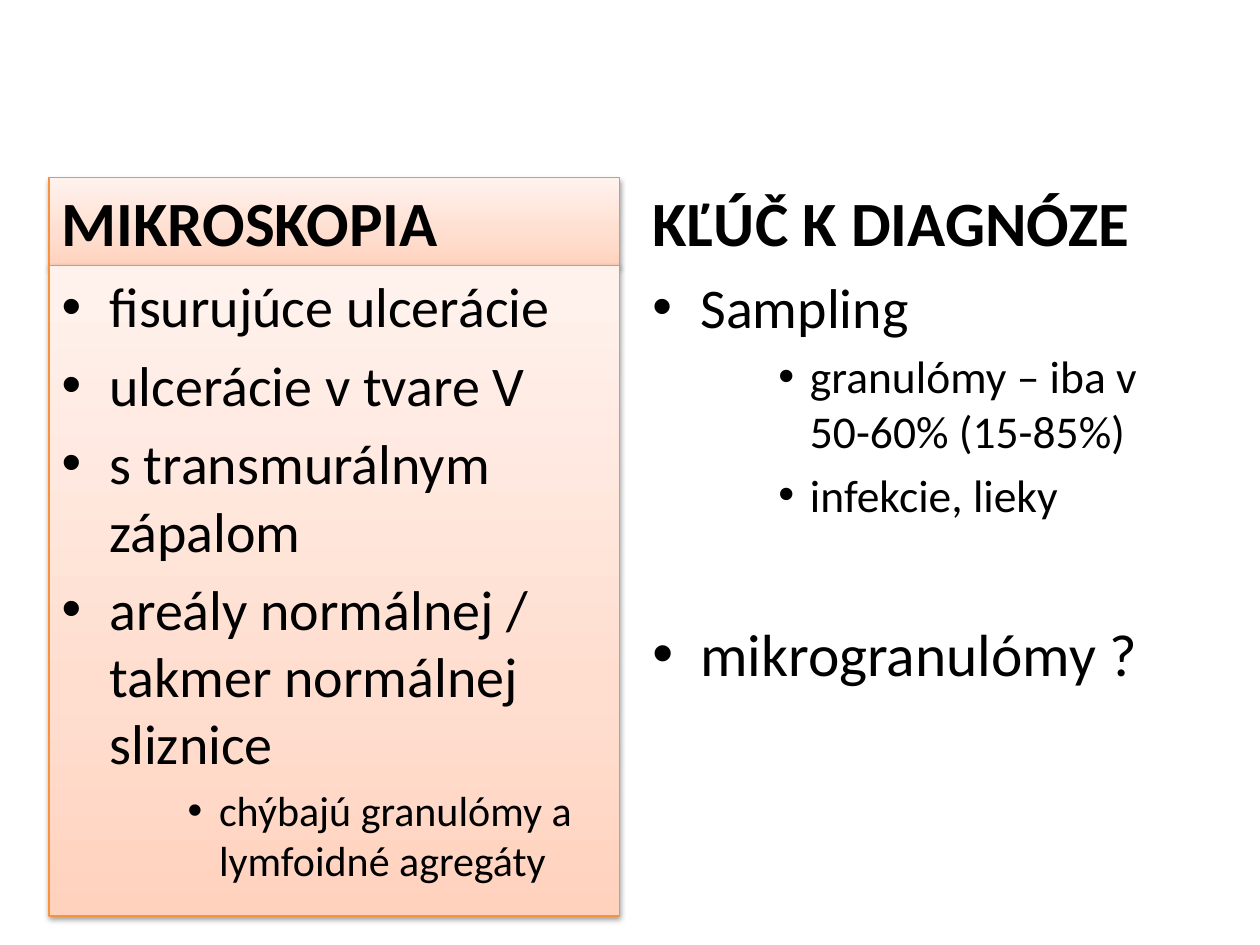
from copy import deepcopy
from dataclasses import dataclass
from typing import Optional

from lxml.etree import SubElement
from pptx import Presentation
from pptx.dml.color import RGBColor as RGB
from pptx.enum.shapes import MSO_SHAPE as Shape
from pptx.enum.text import MSO_ANCHOR as Anchor, PP_ALIGN as Align
from pptx.oxml.ns import qn
from pptx.util import Inches, Pt


@dataclass(frozen=True)
class Theme:
    font: str = "Calibri"
    text: str = "000000"
    line: str = "F69240"
    gradient: tuple = ((0, "FFD2BD"), (0.35, "FFDED0"), (1, "FFF2ED"))
    heading: int = 36
    body: int = 32
    large: int = 34
    sub: int = 26
    small_sub: int = 24
    spacing: float = 0.2


THEME = Theme()
TOP = 1.41
HEADING_HEIGHT = 0.7
INDENTS = {0: (0.38, -0.38), 2: (1.25, -0.25)}


@dataclass(frozen=True)
class Item:
    text: str
    size: int = THEME.body
    level: int = 0
    before: Optional[float] = None


@dataclass(frozen=True)
class Column:
    heading: str
    items: tuple
    left: float
    width: float
    body_height: float
    filled: bool = False


COLUMNS = (
    Column("MIKROSKOPIA", (
        Item("fisurujúce ulcerácie"),
        Item("ulcerácie v tvare V"),
        Item("s transmurálnym zápalom"),
        Item("areály normálnej / takmer normálnej sliznice"),
        Item("chýbajú granulómy a lymfoidné agregáty", THEME.small_sub, 2),
    ), 0.39, 4.53, 5.16, filled=True),
    Column("KĽÚČ K DIAGNÓZE", (
        Item("Sampling"),
        Item("granulómy – iba v 50-60% (15-85%)", THEME.sub, 2),
        Item("infekcie, lieky", THEME.sub, 2),
        Item("mikrogranulómy ?", THEME.large, before=55),
    ), 5.08, 4.42, 4.32),
)


def add_text(p, text: str, *, size: int, bold: bool = False, level: int = 0,
             bullet: bool = False, before: Optional[float] = None) -> None:
    p.alignment = Align.LEFT
    p.level = level
    p.space_before = Pt(size * THEME.spacing if before is None else before)
    if bullet:
        margin, indent = INDENTS[level]
        pPr = p._p.get_or_add_pPr()
        pPr.set("marL", str(Inches(margin)))
        pPr.set("indent", str(Inches(indent)))
        SubElement(pPr, qn("a:buFont"), typeface="Arial")
        SubElement(pPr, qn("a:buChar"), char="•")
    r = p.add_run()
    r.text = text
    r.font.name = THEME.font
    r.font.size = Pt(size)
    r.font.bold = bold
    r.font.color.rgb = RGB.from_string(THEME.text)


def style_panel(sp) -> None:
    sp.fill.gradient()
    sp.fill.gradient_angle = 90
    stops = sp._element.spPr.find(qn("a:gradFill")).find(qn("a:gsLst"))
    stops.append(deepcopy(stops[-1]))
    for stop, (position, color) in zip(sp.fill.gradient_stops, THEME.gradient):
        stop.position = position
        stop.color.rgb = RGB.from_string(color)
    sp.line.color.rgb = RGB.from_string(THEME.line)
    sp.line.width = Pt(0.75)
    sp.shadow.inherit = False
    effects = sp._element.spPr.find(qn("a:effectLst"))
    shadow = SubElement(effects, qn("a:outerShdw"), blurRad=str(Pt(3.1)),
                        dist=str(Pt(1.6)), dir="5400000", rotWithShape="0")
    color = SubElement(shadow, qn("a:srgbClr"), val="000000")
    SubElement(color, qn("a:alpha"), val="38000")


def add_block(s, column: Column, top: float, height: float, anchor):
    box = [Inches(v) for v in (column.left, top, column.width, height)]
    if column.filled:
        sp = s.shapes.add_shape(Shape.RECTANGLE, *box)
        style_panel(sp)
    else:
        sp = s.shapes.add_textbox(*box)
    tf = sp.text_frame
    tf.word_wrap = True
    tf.vertical_anchor = anchor
    return tf


def add_column(s, column: Column) -> None:
    tf = add_block(s, column, TOP, HEADING_HEIGHT, Anchor.BOTTOM)
    add_text(tf.paragraphs[0], column.heading, size=THEME.heading, bold=True)
    tf = add_block(s, column, TOP + HEADING_HEIGHT, column.body_height, Anchor.TOP)
    for i, item in enumerate(column.items):
        p = tf.add_paragraph() if i else tf.paragraphs[0]
        add_text(p, item.text, size=item.size, level=item.level,
                 bullet=True, before=item.before)


def main() -> None:
    prs = Presentation()
    prs.slide_width, prs.slide_height = Inches(10), Inches(7.5)
    s = prs.slides.add_slide(prs.slide_layouts[6])
    for column in COLUMNS:
        add_column(s, column)
    prs.save("out.pptx")


if __name__ == "__main__":
    main()
